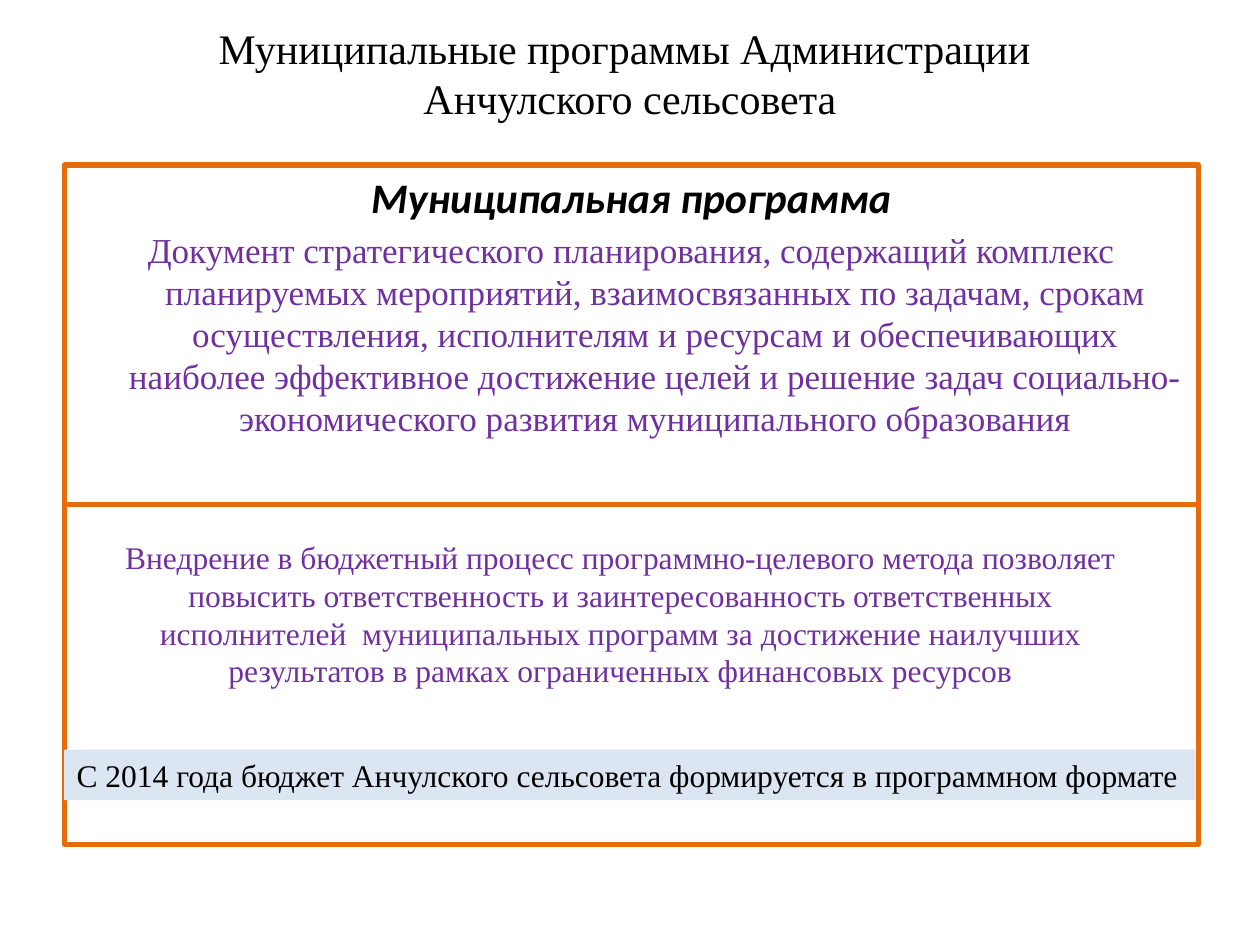
from dataclasses import dataclass

from lxml import etree
from pptx import Presentation
from pptx.dml.color import RGBColor
from pptx.enum.shapes import MSO_CONNECTOR, MSO_SHAPE
from pptx.enum.text import MSO_ANCHOR, PP_ALIGN
from pptx.oxml.ns import qn
from pptx.util import Inches, Pt

RECTANGLE = MSO_SHAPE.RECTANGLE
STRAIGHT = MSO_CONNECTOR.STRAIGHT
TOP, MIDDLE = MSO_ANCHOR.TOP, MSO_ANCHOR.MIDDLE
LEFT, CENTER = PP_ALIGN.LEFT, PP_ALIGN.CENTER
LEFT_SIDE, RIGHT_SIDE = 1, 3


@dataclass(frozen=True)
class Theme:
    serif: str = "Times New Roman"
    sans: str = "Calibri"
    black: RGBColor = RGBColor(0x00, 0x00, 0x00)
    purple: RGBColor = RGBColor(0x70, 0x30, 0xA0)
    orange: RGBColor = RGBColor(0xE4, 0x6C, 0x0A)
    pale_blue: RGBColor = RGBColor(0xDC, 0xE6, 0xF2)
    heading_size: int = 24
    definition_size: int = 20
    note_size: int = 18
    border: float = 3


THEME = Theme()


@dataclass(frozen=True)
class Area:
    left: float
    top: float
    width: float
    height: float

    def lengths(self):
        return [Inches(v) for v in (self.left, self.top, self.width, self.height)]


@dataclass(frozen=True)
class Paragraph:
    text: str
    size: int
    color: RGBColor = THEME.black
    font: str = THEME.serif
    emphasis: bool = False
    align: PP_ALIGN = CENTER
    hanging: float = 0
    space_before: float = 0


TITLE = Paragraph(
    "Муниципальные программы Администрации \vАнчулского сельсовета",
    THEME.heading_size,
)
DEFINITION = [
    Paragraph("Муниципальная программа", THEME.heading_size, font=THEME.sans,
              emphasis=True, hanging=0.38, space_before=4.8),
    Paragraph(
        "Документ стратегического планирования, содержащий комплекс "
        "планируемых мероприятий, взаимосвязанных по задачам, срокам "
        "осуществления, исполнителям и ресурсам и обеспечивающих наиболее "
        "эффективное достижение целей и решение задач "
        "социально-экономического развития муниципального образования",
        THEME.definition_size, THEME.purple, hanging=0.38, space_before=4),
]
BENEFIT = Paragraph(
    "Внедрение в бюджетный процесс программно-целевого метода позволяет "
    "повысить ответственность и заинтересованность ответственных "
    "исполнителей  муниципальных программ за достижение наилучших "
    "результатов в рамках ограниченных финансовых ресурсов",
    THEME.note_size, THEME.purple)
BUDGET_NOTE = Paragraph(
    "С 2014 года бюджет Анчулского сельсовета формируется в программном формате",
    THEME.note_size, align=LEFT)


def write(shape, paragraphs: list[Paragraph], anchor: MSO_ANCHOR = TOP) -> None:
    frame = shape.text_frame
    frame.word_wrap = True
    frame.vertical_anchor = anchor
    for index, content in enumerate(paragraphs):
        para = frame.add_paragraph() if index else frame.paragraphs[0]
        para.text = content.text
        para.alignment = content.align
        para.space_before = Pt(content.space_before)
        font = para.font
        font.name, font.size = content.font, Pt(content.size)
        font.bold = font.italic = content.emphasis
        font.color.rgb = content.color
        if content.hanging:
            properties = para._p.get_or_add_pPr()
            properties.set("marL", str(Inches(content.hanging)))
            properties.set("indent", str(-Inches(content.hanging)))


def add_text(slide, area: Area, paragraph: Paragraph, anchor: MSO_ANCHOR = TOP) -> None:
    write(slide.shapes.add_textbox(*area.lengths()), [paragraph], anchor)


def add_rectangle(slide, area: Area, paragraphs: list[Paragraph],
                  fill: RGBColor | None = None, border: RGBColor | None = None):
    box = slide.shapes.add_shape(RECTANGLE, *area.lengths())
    box.shadow.inherit = False
    if fill is None:
        box.fill.background()
    else:
        box.fill.solid()
        box.fill.fore_color.rgb = fill
    if border is None:
        box.line.fill.background()
    else:
        box.line.color.rgb = border
        box.line.width = Pt(THEME.border)
    write(box, paragraphs)
    return box


def add_divider(slide, frame) -> None:
    """Join the middles of the frame's left and right sides."""
    divider = slide.shapes.add_connector(STRAIGHT, 0, 0, 0, 0)
    divider.begin_connect(frame, LEFT_SIDE)
    divider.end_connect(frame, RIGHT_SIDE)
    divider.line.color.rgb = THEME.orange
    divider.line.width = Pt(THEME.border)
    etree.SubElement(divider._element.spPr, qn("a:effectLst"))


def main() -> None:
    deck = Presentation()
    deck.slide_width, deck.slide_height = Inches(10), Inches(7.5)
    slide = deck.slides.add_slide(deck.slide_layouts[6])

    add_text(slide, Area(0.5, 0, 9, 1.15), TITLE, MIDDLE)
    frame = add_rectangle(slide, Area(0.51, 1.31, 9, 5.39), DEFINITION,
                          border=THEME.orange)
    add_divider(slide, frame)
    add_text(slide, Area(0.75, 4.22, 8.35, 1.31), BENEFIT)
    add_rectangle(slide, Area(0.51, 5.95, 8.98, 0.4), [BUDGET_NOTE],
                  fill=THEME.pale_blue)

    deck.save("out.pptx")


if __name__ == "__main__":
    main()
